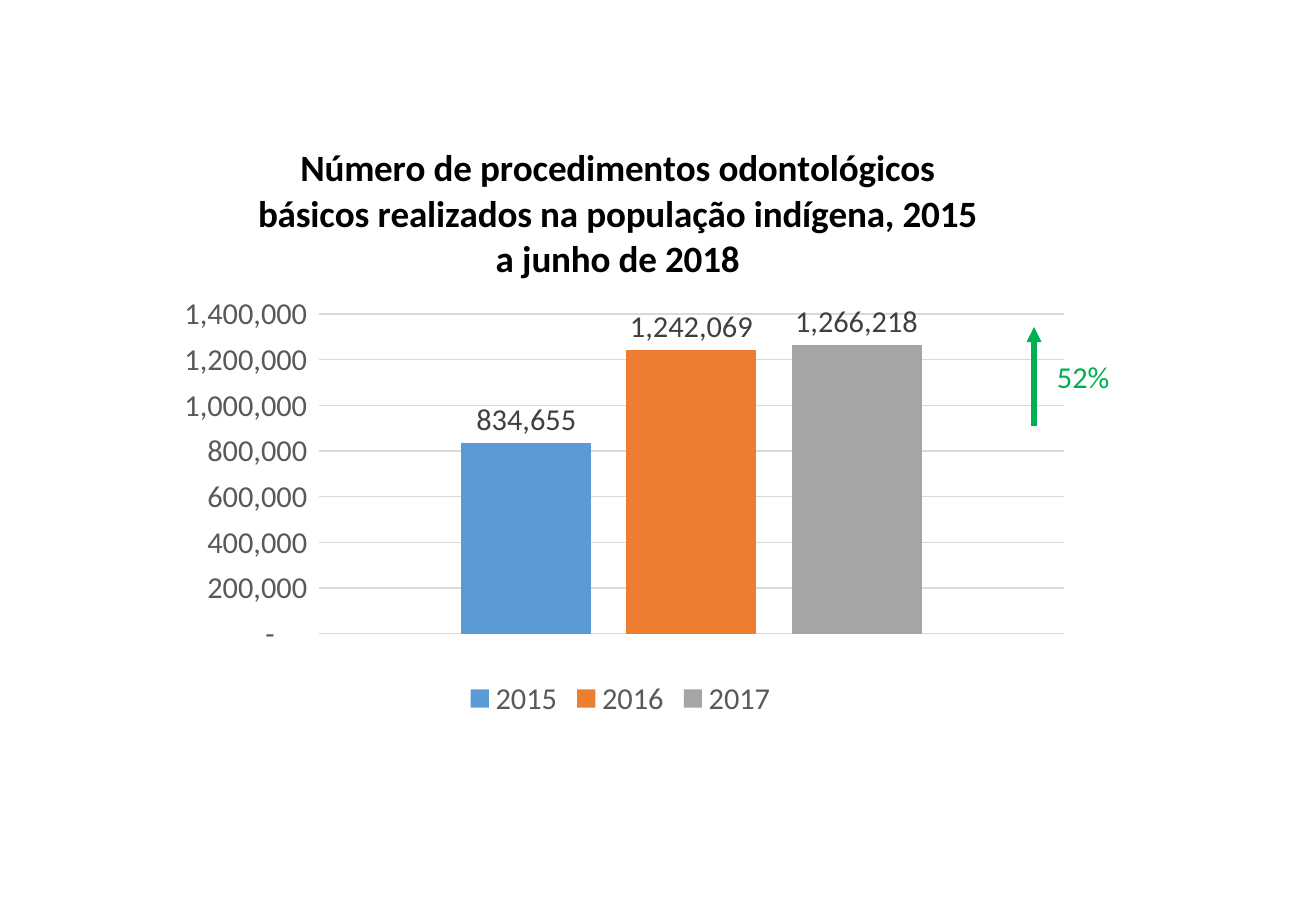
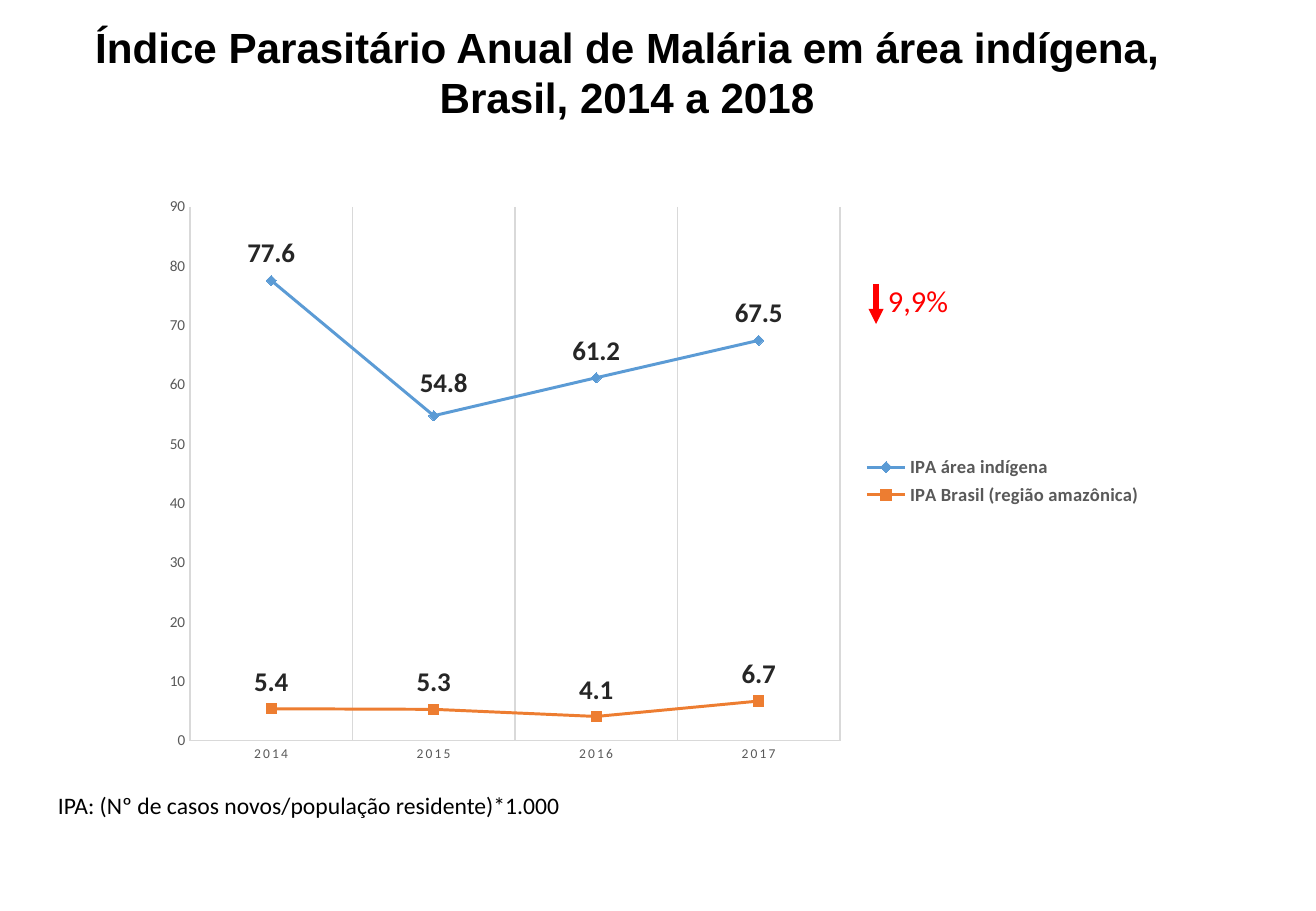
import lxml.etree
import pptx
import pptx.chart.data
import pptx.dml.color
import pptx.enum.chart
import pptx.enum.shapes
import pptx.enum.text
import pptx.oxml
import pptx.oxml.ns
import pptx.util

RGBColor = pptx.dml.color.RGBColor
BLACK = RGBColor(0x00, 0x00, 0x00)
DARK = RGBColor(0x26, 0x26, 0x26)
LABEL_GREY = RGBColor(0x40, 0x40, 0x40)
AXIS_GREY = RGBColor(0x59, 0x59, 0x59)
GRID_GREY = RGBColor(0xD9, 0xD9, 0xD9)
BLUE = RGBColor(0x5B, 0x9B, 0xD5)
ORANGE = RGBColor(0xED, 0x7D, 0x31)
GREY = RGBColor(0xA5, 0xA5, 0xA5)
GREEN = RGBColor(0x00, 0xB0, 0x50)
RED = RGBColor(0xFF, 0x00, 0x00)

EMU_PER_PX = 914400 / 121.5
TITLE_ONLY, BLANK = 5, 6
THOUSANDS = '_-* #,##0_-;\\-* #,##0_-;_-* "-"??_-;_-@_'
ChartType = pptx.enum.chart.XL_CHART_TYPE
LegendPosition = pptx.enum.chart.XL_LEGEND_POSITION
LabelPosition = pptx.enum.chart.XL_LABEL_POSITION
MarkerStyle = pptx.enum.chart.XL_MARKER_STYLE


def px(*lengths):
    return [pptx.util.Emu(round(length * EMU_PER_PX)) for length in lengths]


def format_font(font, size, color, bold=False, name="Calibri"):
    values = {"size": pptx.util.Pt(size), "bold": bold, "name": name}
    for attribute, value in values.items():
        setattr(font, attribute, value)
    font.color.rgb = color


def format_line(line, color, width):
    line.color.rgb = color
    line.width = pptx.util.Pt(width)


def fill_text(shape, text, size, color, bold=False, name="Calibri", align=None):
    frame = shape.text_frame
    values = {
        "text": text,
        "word_wrap": True,
        "auto_size": pptx.enum.text.MSO_AUTO_SIZE.NONE,
        "vertical_anchor": pptx.enum.text.MSO_ANCHOR.TOP,
    }
    for attribute, value in values.items():
        setattr(frame, attribute, value)
    paragraph = frame.paragraphs[0]
    paragraph.alignment = align
    format_font(paragraph.runs[0].font, size, color, bold, name)


def add_text(slide, box, text, size, color):
    fill_text(slide.shapes.add_textbox(*px(*box)), text, size, color)


def add_title(slide, box, text):
    title = slide.shapes.title
    title.left, title.top, title.width, title.height = px(*box)
    fill_text(title, text, 25, BLACK, True, "Arial", pptx.enum.text.PP_ALIGN.CENTER)


def add_trend(slide, box, text, color, arrow):
    """Write a change in the box, with an arrow given as (x, start, end) from its corner."""
    left, top = box[:2]
    x, start, end = arrow
    add_text(slide, box, text, 18, color)
    connector = slide.shapes.add_connector(
        pptx.enum.shapes.MSO_CONNECTOR.STRAIGHT,
        *px(left + x, top + start, left + x, top + end))
    format_line(connector.line, color, 3)
    properties = connector.line._get_or_add_ln()
    lxml.etree.SubElement(properties, pptx.oxml.ns.qn("a:tailEnd"), type="triangle")
    lxml.etree.SubElement(connector.element.spPr, pptx.oxml.ns.qn("a:effectLst"))


def set_layout(parent, index, **values):
    """Give a chart part a manual layout, as the child at this index."""
    for layout in parent.findall(pptx.oxml.ns.qn("c:layout")):
        parent.remove(layout)
    layout = lxml.etree.Element(pptx.oxml.ns.qn("c:layout"))
    manual = lxml.etree.SubElement(layout, pptx.oxml.ns.qn("c:manualLayout"))
    for name, value in values.items():
        lxml.etree.SubElement(manual, pptx.oxml.ns.qn("c:" + name), val=str(value))
    parent.insert(index, layout)


def add_chart(slide, box, kind, categories, series, plot_box):
    """Add a chart whose inner plot area has plot_box, relative to the chart's corner."""
    data = pptx.chart.data.CategoryChartData()
    data.categories = categories
    for name, values in series:
        data.add_series(name, values)
    chart = slide.shapes.add_chart(kind, *px(*box), data).chart
    format_font(chart.font, 10, BLACK)
    chart.has_title = False
    chart.plots[0].vary_by_categories = False
    width, height = box[2:]
    left, top, plot_width, plot_height = plot_box
    set_layout(
        chart.element.xpath(".//c:plotArea")[0], 0,
        layoutTarget="inner", xMode="edge", yMode="edge",
        x=left / width, y=top / height, w=plot_width / width, h=plot_height / height)
    return chart


def format_legend(chart, position, size, bold=False):
    chart.has_legend = True
    chart.legend.position = position
    chart.legend.include_in_layout = False
    format_font(chart.legend.font, size, AXIS_GREY, bold)


def format_axis(axis, size, gridlines, line):
    axis.major_tick_mark = axis.minor_tick_mark = pptx.enum.chart.XL_TICK_MARK.NONE
    format_font(axis.tick_labels.font, size, AXIS_GREY)
    axis.has_major_gridlines = gridlines
    if gridlines:
        format_line(axis.major_gridlines.format.line, GRID_GREY, 0.75)
    if line:
        format_line(axis.format.line, GRID_GREY, 0.75)
    else:
        axis.format.line.fill.background()


def scale_axis(axis, maximum, step, number_format):
    axis.minimum_scale, axis.maximum_scale, axis.major_unit = 0, maximum, step
    axis.tick_labels.number_format = number_format
    axis.tick_labels.number_format_is_linked = False


def format_labels(series, position, number_format, size, color, bold=False):
    labels = series.data_labels
    values = {
        "show_value": True,
        "position": position,
        "number_format": number_format,
        "number_format_is_linked": False,
    }
    for attribute, value in values.items():
        setattr(labels, attribute, value)
    format_font(labels.font, size, color, bold)


def add_procedures_chart(slide, box):
    chart = add_chart(
        slide, box, ChartType.COLUMN_CLUSTERED, ["1"],
        [("2015", [834655]), ("2016", [1242069]), ("2017", [1266218])],
        (160, 197, 745, 320))
    chart.has_title = True
    frame = chart.chart_title.text_frame
    frame.text = ("Número de procedimentos odontológicos básicos realizados "
                  "na população indígena, 2015 a junho de 2018")
    format_font(frame.paragraphs[0].runs[0].font, 22, BLACK, True)
    set_layout(chart.element.xpath(".//c:title")[0], 1,
               xMode="edge", yMode="edge", x=0.1, y=0.03)
    format_legend(chart, LegendPosition.BOTTOM, 18)
    chart.category_axis.visible = False
    format_axis(chart.value_axis, 18, gridlines=True, line=False)
    scale_axis(chart.value_axis, 1400000, 200000, THOUSANDS)
    plot = chart.plots[0]
    plot.gap_width, plot.overlap = 219, -27
    for series, color in zip(plot.series, (BLUE, ORANGE, GREY)):
        series.format.fill.solid()
        series.format.fill.fore_color.rgb = color
        format_labels(series, LabelPosition.OUTSIDE_END, THOUSANDS, 18, LABEL_GREY)


def add_malaria_chart(slide, box):
    chart = add_chart(
        slide, box, ChartType.LINE_MARKERS, ["2014", "2015", "2016", "2017"],
        [("IPA área indígena", [77.6, 54.8, 61.2, 67.5]),
         ("IPA Brasil (região amazônica)", [5.4, 5.3, 4.1, 6.7])],
        (39, 20, 650, 534))
    format_legend(chart, LegendPosition.RIGHT, 11, True)
    format_axis(chart.category_axis, 8, gridlines=True, line=True)
    chart.element.xpath(".//c:catAx//a:defRPr")[0].set("spc", "120")
    format_axis(chart.value_axis, 9, gridlines=False, line=True)
    scale_axis(chart.value_axis, 90, 10, "0")
    styles = ((BLUE, MarkerStyle.DIAMOND), (ORANGE, MarkerStyle.SQUARE))
    for series, (color, marker_style) in zip(chart.plots[0].series, styles):
        series.smooth = False
        format_line(series.format.line, color, 1.75)
        marker = series.marker
        marker.style, marker.size = marker_style, 6
        marker.format.fill.solid()
        marker.format.fill.fore_color.rgb = color
        marker.format.line.color.rgb = color
        format_labels(series, LabelPosition.ABOVE, "0.0", 16, DARK, True)
    label = chart.plots[0].series[0].points[1].data_label
    format_font(label.font, 16, DARK, True)
    label.position = LabelPosition.ABOVE
    set_layout(chart.element.xpath(".//c:dLbl")[0], 1, x=0.01, y=-0.01)


def add_procedures_slide(presentation):
    slide = presentation.slides.add_slide(presentation.slide_layouts[BLANK])
    add_procedures_chart(slide, (159, 117, 923, 606))
    add_trend(slide, (1045, 352, 102, 49), "52%", GREEN, (-11, 74, -25))


def add_malaria_slide(presentation):
    slide = presentation.slides.add_slide(presentation.slide_layouts[TITLE_ONLY])
    add_title(slide, (46, 15, 1162, 129),
              "Índice Parasitário Anual de Malária em área indígena, Brasil, 2014 a 2018")
    add_text(slide, (46, 785, 948, 41),
             "IPA: (Nº de casos novos/população residente)*1.000", 14, BLACK)
    add_malaria_chart(slide, (151, 187, 1004, 588))
    add_trend(slide, (876, 276, 85, 49), "9,9%", RED, (0, 8, 48))


def main():
    presentation = pptx.Presentation()
    presentation.slide_width, presentation.slide_height = px(1316, 911)
    add_procedures_slide(presentation)
    add_malaria_slide(presentation)
    presentation.save("out.pptx")


if __name__ == "__main__":
    main()
